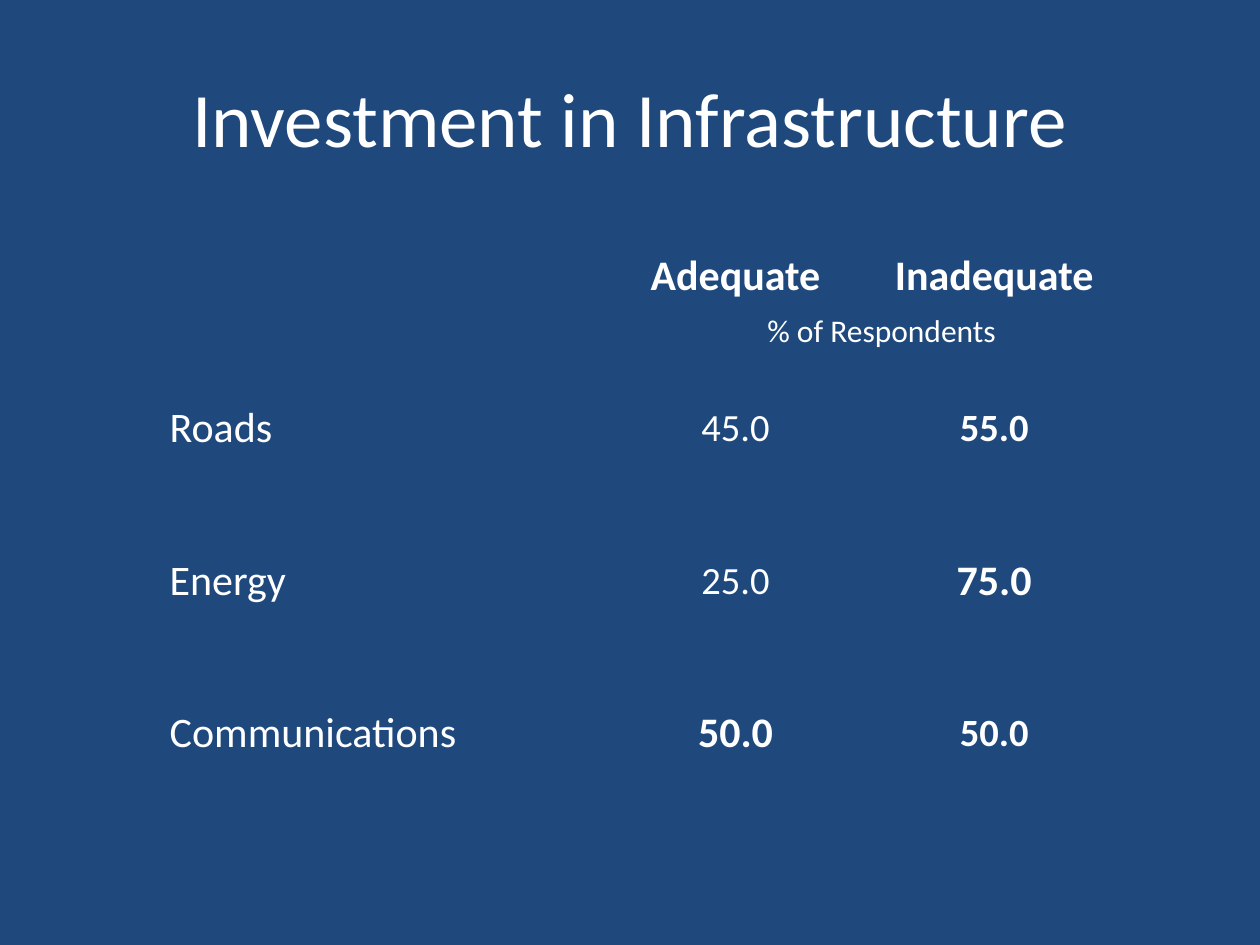
from lxml.etree import SubElement
from pptx import Presentation
from pptx.dml.color import RGBColor
from pptx.enum.text import MSO_ANCHOR, PP_ALIGN
from pptx.oxml.ns import qn
from pptx.util import Cm, Pt

NAVY = "1F497D"
WHITE = "FFFFFF"
ROWS = [
    [("", 24, False), ("Adequate", 24, True), ("Inadequate", 24, True)],
    [("Roads", 24, False), ("45.0", 22, False), ("55.0", 22, True)],
    [("Energy", 24, False), ("25.0", 22, False), ("75.0", 24, True)],
    [("Communications", 24, False), ("50.0", 24, True), ("50.0", 22, True)],
]


def paint(fill, color):
    fill.solid()
    fill.fore_color.rgb = RGBColor.from_string(color)


def write(frame, text, size, bold=False, align=PP_ALIGN.CENTER):
    frame.text = text
    line = frame.paragraphs[0]
    line.alignment = align
    for run in line.runs:
        run.font.name = "Calibri"
        run.font.size = Pt(size)
        run.font.bold = bold
        paint(run.font.fill, WHITE)


def place(shape, box):
    shape.left, shape.top, shape.width, shape.height = map(Cm, box)


def add_title(slide, box):
    title = slide.shapes.title
    place(title, box)
    title.text_frame.vertical_anchor = MSO_ANCHOR.MIDDLE
    write(title.text_frame, "Investment in Infrastructure", 44)


def style_cell(cell):
    cell.vertical_anchor = MSO_ANCHOR.MIDDLE
    cell.margin_left = cell.margin_right = cell.margin_top = Cm(0.03)
    cell.margin_bottom = 0
    props = cell._tc.get_or_add_tcPr()
    for side in ("lnL", "lnR", "lnT", "lnB"):
        edge = SubElement(props, qn(f"a:{side}"), w="0")
        SubElement(edge, qn("a:noFill"))
    paint(cell.fill, NAVY)


def add_grid(slide, box):
    grid = slide.shapes.add_table(len(ROWS), len(ROWS[0]), *map(Cm, box)).table
    first = 8.83
    rest = (box[2] - first) / 2
    for col, width in zip(grid.columns, (first, rest, rest)):
        col.width = Cm(width)
    for r, row in enumerate(ROWS):
        for c, (text, size, bold) in enumerate(row):
            cell = grid.cell(r, c)
            align = PP_ALIGN.CENTER if c else PP_ALIGN.JUSTIFY
            write(cell.text_frame, text, size, bold, align)
            style_cell(cell)


def add_note(slide, box):
    frame = slide.shapes.add_textbox(*map(Cm, box)).text_frame
    frame.word_wrap = True
    write(frame, "% of Respondents", 18)


def main():
    deck = Presentation()
    deck.slide_width, deck.slide_height = Cm(25.4), Cm(19.05)
    slide = deck.slides.add_slide(deck.slide_layouts[5])
    paint(slide.background.fill, NAVY)
    add_title(slide, (1.27, 0.76, 22.86, 3.18))
    add_grid(slide, (3.39, 4.02, 19.26, 12.28))
    add_note(slide, (11.85, 6.15, 11.85, 1.03))
    deck.save("out.pptx")


if __name__ == "__main__":
    main()
